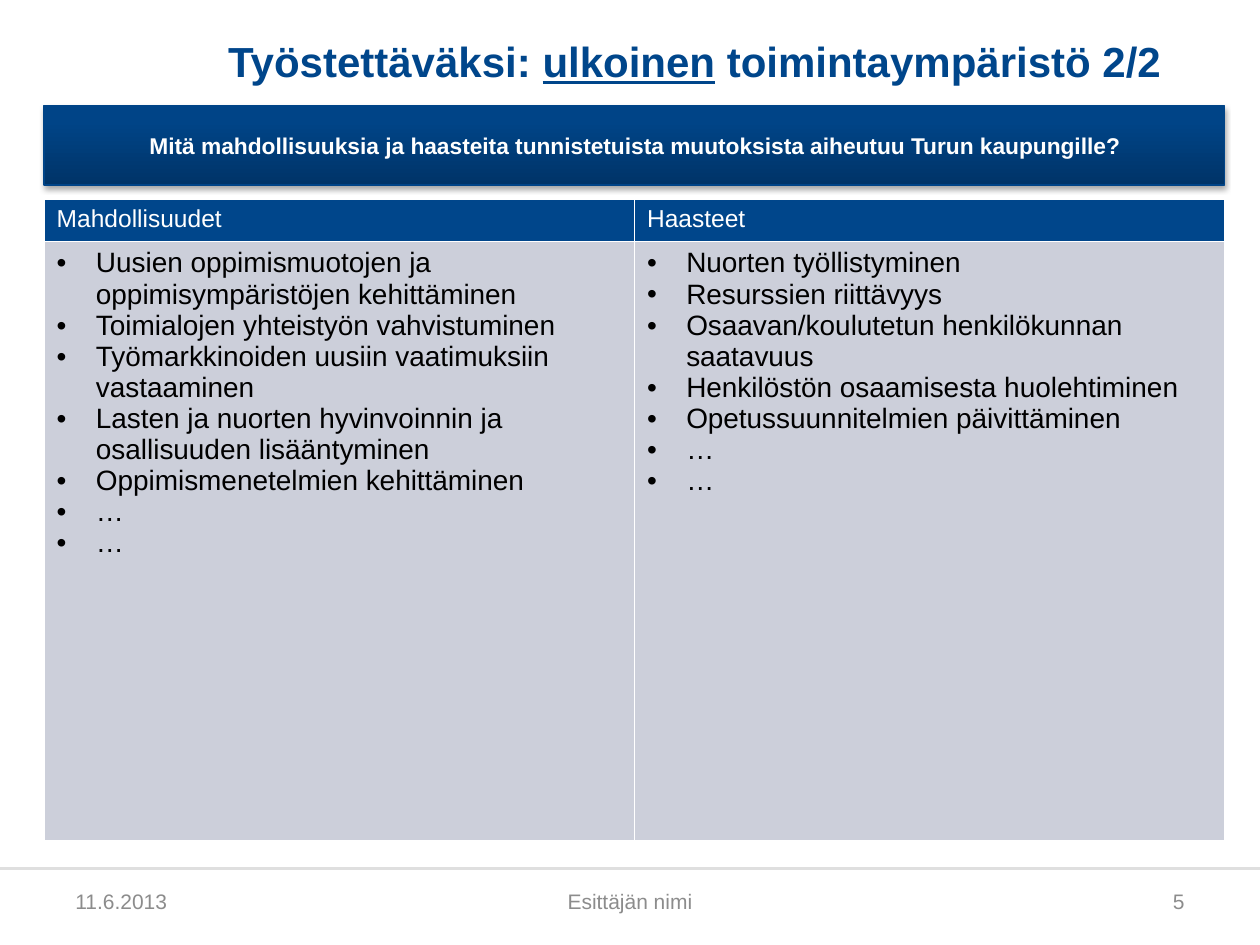
from dataclasses import dataclass

from lxml.etree import SubElement
from pptx import Presentation
from pptx.dml.color import RGBColor as RGB
from pptx.enum.shapes import MSO_CONNECTOR as Connector, MSO_SHAPE as ShapeKind
from pptx.enum.text import MSO_ANCHOR as Anchor, PP_ALIGN as Align
from pptx.oxml import parse_xml
from pptx.oxml.ns import nsdecls, qn
from pptx.util import Cm, Pt


@dataclass(frozen=True)
class Theme:
    font: str = "Arial"
    navy: RGB = RGB(0x00, 0x46, 0x8B)
    banner_dark: RGB = RGB(0x00, 0x34, 0x68)
    banner_light: RGB = RGB(0x00, 0x44, 0x87)
    cell: RGB = RGB(0xCC, 0xCF, 0xDA)
    rule: RGB = RGB(0xDF, 0xDF, 0xDF)
    muted: RGB = RGB(0x8C, 0x8C, 0x8C)
    white: RGB = RGB(0xFF, 0xFF, 0xFF)
    black: RGB = RGB(0x00, 0x00, 0x00)
    title_size: int = 24
    body_size: int = 16
    header_size: int = 14
    banner_size: int = 13
    footer_size: int = 12


@dataclass(frozen=True)
class FooterField:
    text: str
    left: float
    width: float
    align: Align


@dataclass(frozen=True)
class Column:
    heading: str
    points: tuple[str, ...]


THEME = Theme()
SLIDE_WIDTH, SLIDE_HEIGHT = 25.4, 19.05
CONTENT_LEFT, CONTENT_WIDTH = 0.89, 23.8
BULLET_INDENT = Cm(0.79)

TITLE_PARTS = (("Työstettäväksi: ", False), ("ulkoinen", True),
               (" toimintaympäristö 2/2", False))
QUESTION = ("Mitä mahdollisuuksia ja haasteita tunnistetuista muutoksista "
            "aiheutuu Turun kaupungille?")
FOOTER_FIELDS = (
    FooterField("11.6.2013", 1.27, 5.93, Align.LEFT),
    FooterField("Esittäjän nimi", 8.68, 8.04, Align.CENTER),
    FooterField("5", 18.2, 5.93, Align.RIGHT),
)
COLUMNS = (
    Column("Mahdollisuudet", (
        "Uusien oppimismuotojen ja oppimisympäristöjen kehittäminen",
        "Toimialojen yhteistyön vahvistuminen",
        "Työmarkkinoiden uusiin vaatimuksiin vastaaminen",
        "Lasten ja nuorten hyvinvoinnin ja osallisuuden lisääntyminen",
        "Oppimismenetelmien kehittäminen", "…", "…")),
    Column("Haasteet", (
        "Nuorten työllistyminen",
        "Resurssien riittävyys",
        "Osaavan/koulutetun henkilökunnan saatavuus",
        "Henkilöstön osaamisesta huolehtiminen",
        "Opetussuunnitelmien päivittäminen", "…", "…")),
)


def style_font(font, size: int, color: RGB, bold: bool = False) -> None:
    font.name, font.size, font.bold = THEME.font, Pt(size), bold
    font.color.rgb = color


def style_text(text_frame, size: int, color: RGB, bold: bool = False) -> None:
    for paragraph in text_frame.paragraphs:
        for run in paragraph.runs:
            style_font(run.font, size, color, bold)


def add_soft_shadow(shape) -> None:
    shape._element.spPr.append(parse_xml(
        f'<a:effectLst {nsdecls("a")}><a:outerShdw blurRad="{Pt(3.1)}" dist="{Pt(1.8)}" '
        'dir="5400000" rotWithShape="0"><a:srgbClr val="000000"><a:alpha val="35000"/>'
        '</a:srgbClr></a:outerShdw></a:effectLst>'))


def add_rectangle(slide, left: float, top: float, width: float, height: float):
    shape = slide.shapes.add_shape(
        ShapeKind.RECTANGLE, Cm(left), Cm(top), Cm(width), Cm(height))
    add_soft_shadow(shape)
    return shape


def add_footer(slide) -> None:
    band = add_rectangle(slide, 0, 17.53, SLIDE_WIDTH, 1.52)
    band.fill.solid()
    band.fill.fore_color.rgb = THEME.white
    band.line.fill.background()

    rule = slide.shapes.add_connector(
        Connector.STRAIGHT, 0, Cm(17.5), Cm(SLIDE_WIDTH), Cm(17.5))
    rule.line.color.rgb = THEME.rule
    rule.line.width = Pt(1.75)
    SubElement(rule._element.spPr, qn("a:effectLst"))

    for field in FOOTER_FIELDS:
        box = slide.shapes.add_textbox(
            Cm(field.left), Cm(17.65), Cm(field.width), Cm(1.02))
        frame = box.text_frame
        frame.word_wrap = True
        frame.vertical_anchor = Anchor.MIDDLE
        frame.text = field.text
        frame.paragraphs[0].alignment = field.align
        style_text(frame, THEME.footer_size, THEME.muted)


def fill_title(title) -> None:
    title.left, title.top, title.width, title.height = Cm(4.6), Cm(0.13), Cm(20.9), Cm(2.2)
    frame = title.text_frame
    frame.margin_left = frame.margin_right = frame.margin_top = frame.margin_bottom = 0
    frame.vertical_anchor = Anchor.MIDDLE
    paragraph = frame.paragraphs[0]
    paragraph.alignment = Align.LEFT
    for text, underlined in TITLE_PARTS:
        run = paragraph.add_run()
        run.text = text
        style_font(run.font, THEME.title_size, THEME.navy, bold=True)
        run.font.underline = underlined


def add_banner(slide) -> None:
    banner = add_rectangle(slide, CONTENT_LEFT, 2.13, CONTENT_WIDTH, 1.6)
    banner.fill.gradient()
    banner.fill.gradient_angle = 90
    colors = ((0, THEME.banner_dark), (0.8, THEME.banner_light))
    for stop, (position, color) in zip(banner.fill.gradient_stops, colors):
        stop.position, stop.color.rgb = position, color
    banner.line.color.rgb = THEME.banner_light
    banner.line.width = Pt(0.75)
    frame = banner.text_frame
    frame.word_wrap = True
    frame.vertical_anchor = Anchor.MIDDLE
    frame.text = QUESTION
    frame.paragraphs[0].alignment = Align.CENTER
    style_text(frame, THEME.banner_size, THEME.white, bold=True)


def format_cell(cell, fill: RGB) -> None:
    properties = cell._tc.get_or_add_tcPr()
    for side in ("lnL", "lnR", "lnT", "lnB"):
        properties.append(parse_xml(
            f'<a:{side} {nsdecls("a")} w="{Pt(1)}"><a:solidFill>'
            f'<a:srgbClr val="{THEME.white}"/></a:solidFill></a:{side}>'))
    cell.fill.solid()
    cell.fill.fore_color.rgb = fill


def add_bullet(paragraph) -> None:
    properties = paragraph._p.get_or_add_pPr()
    properties.set("marL", str(BULLET_INDENT))
    properties.set("indent", str(-BULLET_INDENT))
    SubElement(properties, qn("a:buFont"), typeface=THEME.font)
    SubElement(properties, qn("a:buChar"), char="•")


def add_comparison_table(slide) -> None:
    row_heights = (0.81, 12.09)
    table = slide.shapes.add_table(
        2, len(COLUMNS), Cm(CONTENT_LEFT), Cm(4.02),
        Cm(CONTENT_WIDTH), Cm(sum(row_heights))).table
    table.horz_banding = False
    for row, height in zip(table.rows, row_heights):
        row.height = Cm(height)
    for index, column in enumerate(COLUMNS):
        header, body = table.cell(0, index), table.cell(1, index)
        header.text_frame.text = column.heading
        style_text(header.text_frame, THEME.header_size, THEME.white)
        format_cell(header, THEME.navy)
        body.text_frame.text = "\n".join(column.points)
        for paragraph in body.text_frame.paragraphs:
            add_bullet(paragraph)
        style_text(body.text_frame, THEME.body_size, THEME.black)
        format_cell(body, THEME.cell)


def main() -> None:
    presentation = Presentation()
    presentation.slide_width, presentation.slide_height = Cm(SLIDE_WIDTH), Cm(SLIDE_HEIGHT)
    slide = presentation.slides.add_slide(presentation.slide_layouts[5])
    # Footer band, rule and fields
    add_footer(slide)
    # Heading, opportunities and challenges, and the question above them
    fill_title(slide.shapes.title)
    add_comparison_table(slide)
    add_banner(slide)
    presentation.save("out.pptx")


if __name__ == "__main__":
    main()
